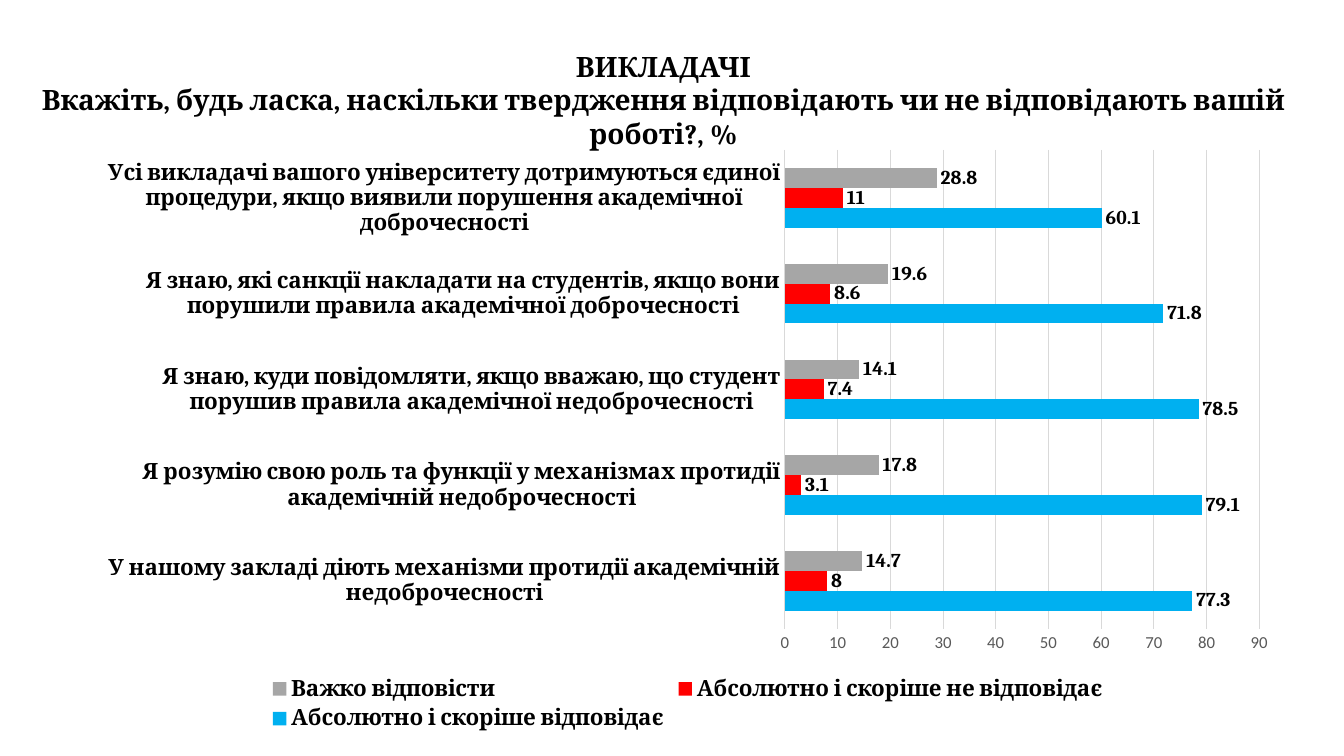
import pptx
import pptx.util
import pptx.dml.color
import pptx.chart.data
import pptx.enum.chart
import pptx.enum.text

Cm = pptx.util.Cm
Pt = pptx.util.Pt
enum = pptx.enum.chart


def color(hex):
    return pptx.dml.color.RGBColor.from_string(hex)


class Deck:
    serif, sans = "Cambria", "Calibri"
    ink, muted, rule = "000000", "595959", "D9D9D9"

    def __init__(self):
        self.file = pptx.Presentation()
        self.file.slide_width = Cm(33.87)
        self.file.slide_height = Cm(19.05)
        self.slide = self.file.slides.add_slide(self.file.slide_layouts[6])

    def style(self, font, size, bold=True, face=serif, ink=ink):
        font.name, font.size, font.bold = face, Pt(size), bold
        font.color.rgb = color(ink)

    def title(self, lines, box):
        frame = self.slide.shapes.add_textbox(*map(Cm, box)).text_frame
        frame.word_wrap = True
        frame.text = "\n".join(lines)
        for line in frame.paragraphs:
            line.alignment = pptx.enum.text.PP_ALIGN.CENTER
            for run in line.runs:
                self.style(run.font, 20)
        return frame

    def line(self, form):
        form.line.color.rgb = color(self.rule)
        form.line.width = Pt(0.75)

    def bars(self, cats, series, box):
        data = pptx.chart.data.CategoryChartData()
        data.categories = cats
        for name, fill, vals in series:
            data.add_series(name, vals)
        kind = enum.XL_CHART_TYPE.BAR_CLUSTERED
        chart = self.slide.shapes.add_chart(kind, *map(Cm, box), data).chart
        self.style(chart.font, 10, False, self.sans)
        chart.has_title = False

        # Bars and their values
        plot = chart.plots[0]
        plot.gap_width = 182
        plot.vary_by_categories = False
        for bar, (name, fill, vals) in zip(plot.series, series):
            bar.format.fill.solid()
            bar.format.fill.fore_color.rgb = color(fill)
            bar.invert_if_negative = False
            labels = bar.data_labels
            labels.show_value = True
            labels.position = enum.XL_LABEL_POSITION.OUTSIDE_END
            self.style(labels.font, 14)

        # Axes
        cat, val = chart.category_axis, chart.value_axis
        for axis in (cat, val):
            axis.major_tick_mark = enum.XL_TICK_MARK.NONE
            axis.minor_tick_mark = enum.XL_TICK_MARK.NONE
        self.style(cat.tick_labels.font, 16)
        self.line(cat.format)
        self.style(val.tick_labels.font, 12, False, self.sans, self.muted)
        val.format.line.fill.background()
        val.has_major_gridlines = True
        self.line(val.major_gridlines.format)

        # Legend
        chart.has_legend = True
        chart.legend.position = enum.XL_LEGEND_POSITION.BOTTOM
        chart.legend.include_in_layout = False
        self.style(chart.legend.font, 16)


CATS = [
    "У нашому закладі діють механізми протидії академічній недоброчесності",
    "Я розумію свою роль та функції у механізмах протидії академічній недоброчесності",
    "Я знаю, куди повідомляти, якщо вважаю, що студент порушив правила академічної недоброчесності",
    "Я знаю, які санкції накладати на студентів, якщо вони порушили правила академічної доброчесності",
    "Усі викладачі вашого університету дотримуються єдиної процедури, якщо виявили порушення академічної доброчесності",
]
SERIES = [
    ("Абсолютно і скоріше відповідає", "00B0F0", (77.3, 79.1, 78.5, 71.8, 60.1)),
    ("Абсолютно і скоріше не відповідає", "FF0000", (8, 3.1, 7.4, 8.6, 11)),
    ("Важко відповісти", "A6A6A6", (14.7, 17.8, 14.1, 19.6, 28.8)),
]


def main():
    deck = Deck()
    # Heading, its first line set slightly to the left
    head = deck.title([
        "ВИКЛАДАЧІ",
        "Вкажіть, будь ласка, наскільки твердження відповідають чи не відповідають вашій роботі?, %",
    ], (0.58, 1.12, 32.84, 2.13))
    pad = head.paragraphs[0].runs[0].font.size * 2
    head.paragraphs[0]._p.get_or_add_pPr().set("marR", str(int(pad * 0.4)))
    # Survey answers
    deck.bars(CATS, SERIES, (2.11, 3.48, 30.45, 15.06))
    deck.file.save("out.pptx")


if __name__ == "__main__":
    main()
